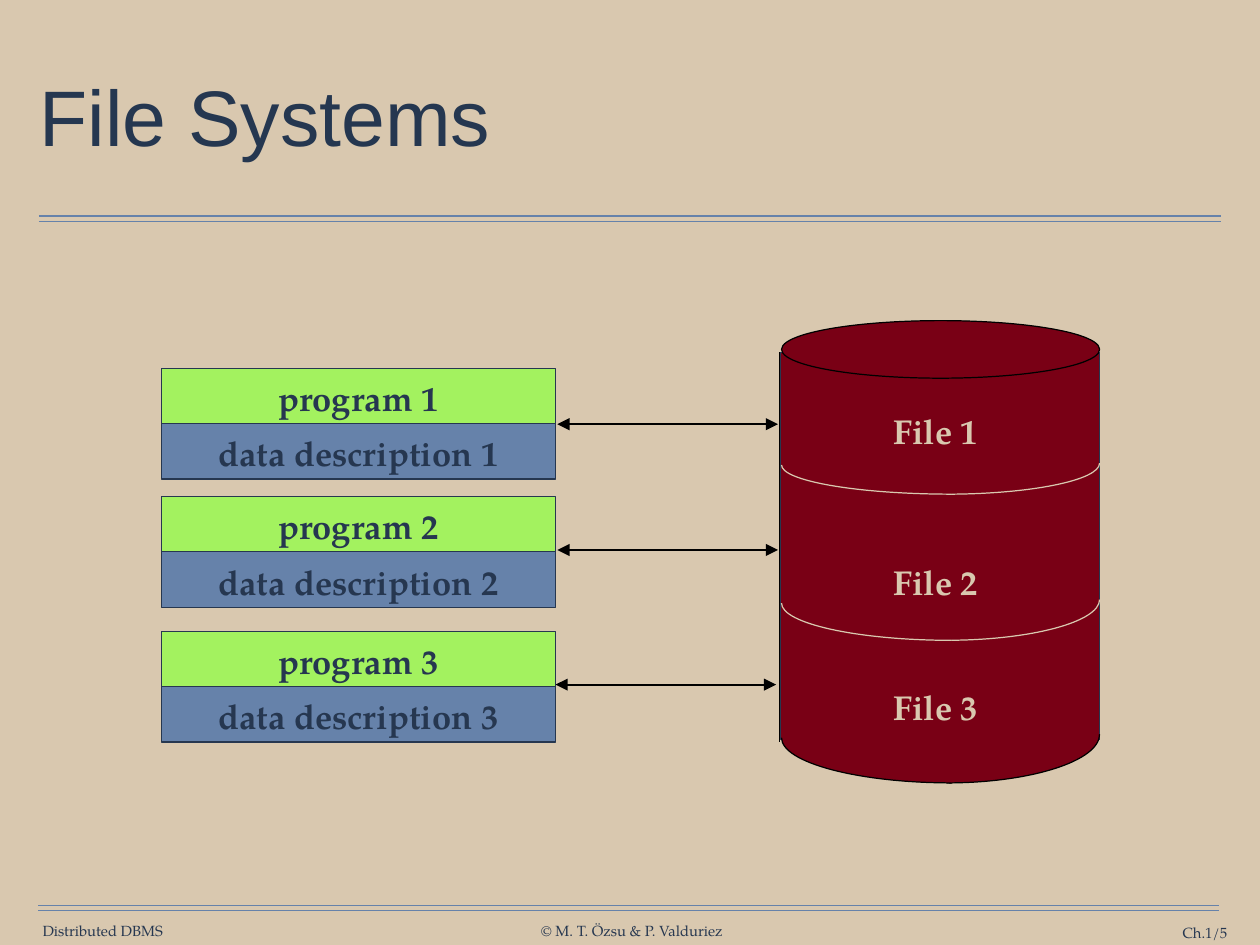
from copy import deepcopy

from lxml import etree
from pptx import Presentation
from pptx.dml.color import RGBColor
from pptx.enum.shapes import MSO_CONNECTOR, MSO_SHAPE
from pptx.enum.text import MSO_ANCHOR, MSO_AUTO_SIZE, PP_ALIGN
from pptx.oxml.ns import qn
from pptx.util import Inches, Pt

STRAIGHT = MSO_CONNECTOR.STRAIGHT
RECTANGLE, OVAL = MSO_SHAPE.RECTANGLE, MSO_SHAPE.OVAL
TOP, MIDDLE = MSO_ANCHOR.TOP, MSO_ANCHOR.MIDDLE
FIT_SHAPE, FIT_NONE = MSO_AUTO_SIZE.SHAPE_TO_FIT_TEXT, MSO_AUTO_SIZE.NONE
LEFT, CENTER, RIGHT = PP_ALIGN.LEFT, PP_ALIGN.CENTER, PP_ALIGN.RIGHT

SAND = RGBColor(0xD9, 0xC8, 0xAF)
NAVY = RGBColor(0x26, 0x37, 0x50)
TITLE_NAVY = RGBColor(0x25, 0x37, 0x50)
BLUE = RGBColor(0x66, 0x82, 0xAA)
GREEN = RGBColor(0xA3, 0xF2, 0x5F)
MAROON = RGBColor(0x79, 0x00, 0x15)
BLACK = RGBColor(0x00, 0x00, 0x00)

SERIF, SANS = "TeX Gyre Pagella", "Arial"
CURVE_PULL = 0.55  # control point distance that makes a quarter ellipse


class SlideBuilder:
    """Holds the current slide and draws each kind of element on it."""

    def __init__(self, slide):
        self.slide = slide
        self.shapes = slide.shapes
        slide.background.fill.solid()
        slide.background.fill.fore_color.rgb = SAND

    def style(self, shape, fill, line):
        shape.shadow.inherit = False
        shape.fill.solid()
        shape.fill.fore_color.rgb = fill
        shape.line.color.rgb = line
        shape.line.width = Pt(1)

    def block(self, kind, left, top, width, height, fill, line):
        shape = self.shapes.add_shape(
            kind, Inches(left), Inches(top), Inches(width), Inches(height))
        self.style(shape, fill, line)

    def line(self, x1, y1, x2, y2, color, width=1, arrows=False):
        connector = self.shapes.add_connector(
            STRAIGHT, Inches(x1), Inches(y1), Inches(x2), Inches(y2))
        connector.line.color.rgb = color
        connector.line.width = Pt(width)
        properties = connector._element.spPr
        if arrows:
            outline = properties.find(qn("a:ln"))
            for end in ("a:headEnd", "a:tailEnd"):
                etree.SubElement(outline, qn(end), type="triangle",
                                 w="lg", len="lg")
        etree.SubElement(properties, qn("a:effectLst"))

    def quarter(self, center_x, center_y, radius_x, radius_y, line):
        """Filled quarter ellipse with only its curve stroked.

        A negative radius_x turns the quarter to the left.
        """
        center = (Inches(center_x), Inches(center_y))
        side = (Inches(center_x + radius_x), center[1])
        bottom = (center[0], Inches(center_y + radius_y))
        builder = self.shapes.build_freeform(*side)
        builder.add_line_segments([bottom, center], close=True)
        shape = builder.convert_to_shape()
        self.style(shape, MAROON, line)

        # Bend the segment from side to bottom
        wedge = next(shape._element.iter(qn("a:path")))
        (x1, y1), (x2, y2) = [
            (int(point.get("x")), int(point.get("y")))
            for point in list(wedge.iter(qn("a:pt")))[:2]]
        bend = etree.Element(qn("a:cubicBezTo"))
        for x, y in ((x1, y1 + CURVE_PULL * (y2 - y1)),
                     (x2 + CURVE_PULL * (x1 - x2), y2), (x2, y2)):
            etree.SubElement(bend, qn("a:pt"), x=str(round(x)), y=str(round(y)))
        wedge.replace(wedge[1], bend)

        # Separate the open curve from the filled wedge
        curve = deepcopy(wedge)
        for straight_part in list(curve)[-2:]:
            curve.remove(straight_part)
        curve.set("fill", "none")
        wedge.set("stroke", "0")
        wedge.addprevious(curve)

    def text(self, text, left, top, width, height, size=28, color=NAVY,
             font=SERIF, bold=False, align=CENTER, anchor=TOP,
             insets=(0.14, 0.07), wrap=False, fit=FIT_SHAPE, spacing=None):
        box = self.shapes.add_textbox(
            Inches(left), Inches(top), Inches(width), Inches(height))
        frame = box.text_frame
        frame.text = text
        frame.word_wrap = wrap
        frame.auto_size = fit
        frame.vertical_anchor = anchor
        frame.margin_left = frame.margin_right = Inches(insets[0])
        frame.margin_top = frame.margin_bottom = Inches(insets[1])
        paragraph = frame.paragraphs[0]
        paragraph.alignment = align
        if spacing:
            paragraph.line_spacing = spacing
        run_font = paragraph.runs[0].font
        run_font.name, run_font.size, run_font.bold = font, Pt(size), bold
        run_font.color.rgb = color


def main():
    presentation = Presentation()
    presentation.slide_width = Inches(14.22)
    presentation.slide_height = Inches(10.67)
    slide = presentation.slides.add_slide(presentation.slide_layouts[6])
    builder = SlideBuilder(slide)

    # Double rules under the title and above the footer
    for left, right, top in ((0.44, 13.78, 2.44), (0.43, 13.76, 10.22)):
        for y in (top, top + 0.06):
            builder.line(left, y, right, y, BLUE)

    # Footer
    for text, left, top, width, align, wrap in (
            ("Distributed DBMS", 0.47, 10.41, 1.38, CENTER, False),
            ("© M. T. Özsu & P. Valduriez", 6.09, 10.41, 2.08, CENTER, False),
            ("Ch.1/5", 12.31, 10.43, 1.54, RIGHT, True)):
        builder.text(text, left, top, width, 0.2, size=12, align=align,
                     anchor=MIDDLE, insets=(0, 0), wrap=wrap)

    # Title
    builder.text("File Systems", 0.39, 0.49, 13.44, 1.76, size=64,
                 color=TITLE_NAVY, font=SANS, align=LEFT, anchor=MIDDLE,
                 insets=(0.06, 0.06), wrap=True, fit=FIT_NONE, spacing=0.9)

    # Arrows between programs and files
    for left, y in ((6.29, 4.79), (6.29, 6.21), (6.27, 7.73)):
        builder.line(left, y, left + 2.49, y, BLACK, width=1.5, arrows=True)

    # Programs with their data descriptions
    for number, top in enumerate((4.16, 5.61, 7.13), start=1):
        builder.block(RECTANGLE, 1.82, top, 4.45, 0.63, GREEN, NAVY)
        builder.text(f"program {number}", 2.99, top - 0.02, 2.11, 0.65,
                     bold=True, spacing=1.1)
        builder.block(RECTANGLE, 1.82, top + 0.62, 4.45, 0.63, BLUE, NAVY)
        builder.text(f"data description {number}", 2.31, top + 0.65, 3.47, 0.61,
                     bold=True)

    # Cylinder body and lid
    builder.line(12.4, 3.95, 12.4, 8.35, BLACK)
    builder.block(RECTANGLE, 8.81, 3.98, 3.6, 4.37, MAROON, NAVY)
    builder.block(OVAL, 8.82, 3.62, 3.59, 0.65, MAROON, BLACK)
    builder.line(8.8, 3.98, 8.8, 8.38, BLACK)

    # Cylinder bottom and the curves that divide the files
    for right_y, left_y, bottom, line in (
            (8.29, 8.33, 8.84, BLACK),
            (5.23, 5.25, 5.58, SAND),
            (6.77, 6.81, 7.23, SAND)):
        builder.quarter(10.68, right_y, 1.73, bottom - right_y, line)
        builder.quarter(10.74, left_y, -1.92, bottom - left_y, line)

    # File names
    for number, top in enumerate((4.56, 6.26, 7.68), start=1):
        builder.text(f"File {number}", 9.93, top, 1.26, 0.61,
                     color=SAND, bold=True)

    presentation.save("out.pptx")


if __name__ == "__main__":
    main()
